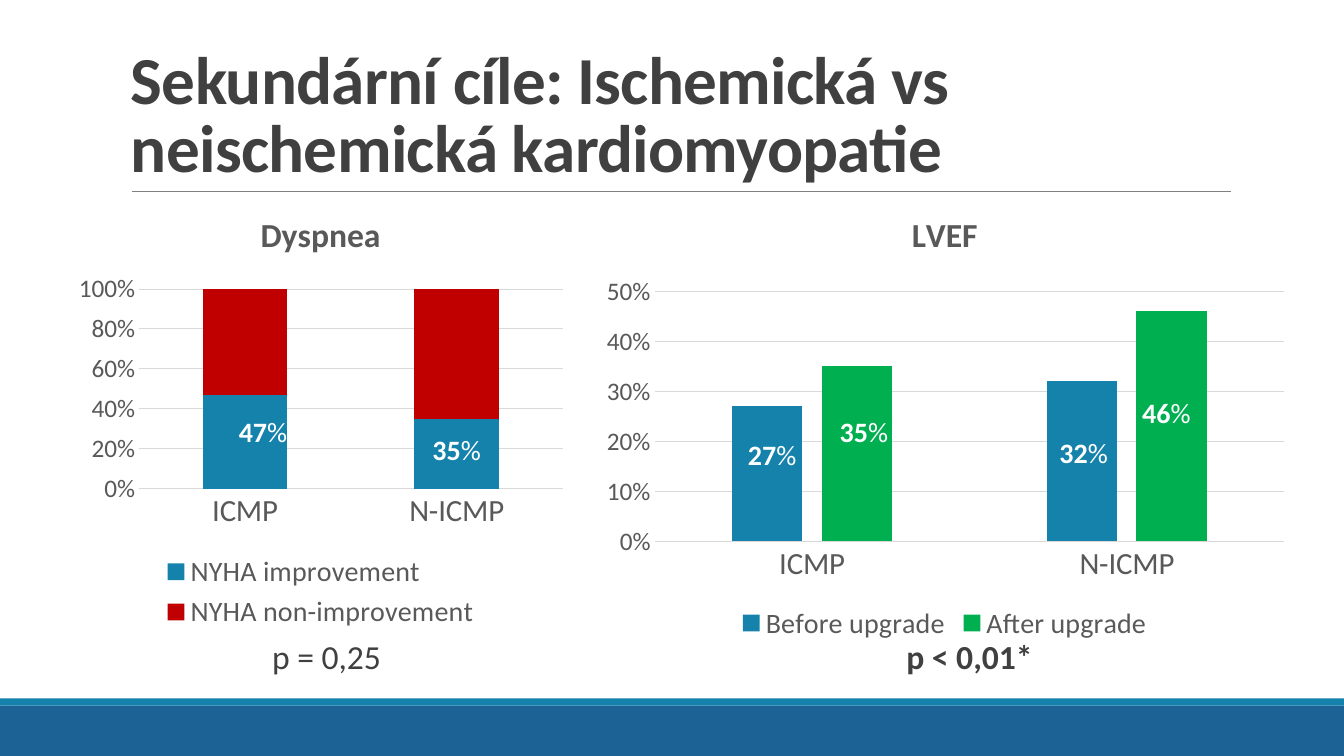
from lxml import etree
from pptx import Presentation
from pptx.chart.data import CategoryChartData
from pptx.dml.color import RGBColor
from pptx.enum.chart import XL_CHART_TYPE, XL_LEGEND_POSITION, XL_TICK_MARK
from pptx.enum.shapes import MSO_CONNECTOR, MSO_SHAPE
from pptx.enum.text import MSO_ANCHOR
from pptx.oxml.ns import qn
from pptx.util import Inches, Pt

STACKED = XL_CHART_TYPE.COLUMN_STACKED_100
CLUSTERED = XL_CHART_TYPE.COLUMN_CLUSTERED
LEGEND_BOTTOM = XL_LEGEND_POSITION.BOTTOM
NO_TICK = XL_TICK_MARK.NONE
STRAIGHT = MSO_CONNECTOR.STRAIGHT
RECTANGLE = MSO_SHAPE.RECTANGLE
TOP, BOTTOM = MSO_ANCHOR.TOP, MSO_ANCHOR.BOTTOM

FONT = "Calibri"
COLORS = {
    "navy": "1C6294", "blue": "1482AB", "red": "C00000", "green": "00B050",
    "dark": "404040", "label": "595959", "rule": "808080", "grid": "D9D9D9",
    "white": "FFFFFF",
}
CATEGORIES = ("ICMP", "N-ICMP")


def color(name):
    return RGBColor.from_string(COLORS[name])


class SlideBuilder:
    """Holds the shared style and the slide being filled."""

    def __init__(self, page):
        self.page = page

    def style_font(self, font, size, color_name, bold=False):
        font.name, font.size, font.bold = FONT, Pt(size), bold
        font.color.rgb = color(color_name)

    def style_line(self, line, color_name, width):
        line.color.rgb = color(color_name)
        line.width = Pt(width)

    def band(self, top, height, color_name):
        shape = self.page.shapes.add_shape(
            RECTANGLE, 0, Inches(top), Inches(13.33), Inches(height))
        shape.shadow.inherit = False
        shape.fill.solid()
        shape.fill.fore_color.rgb = color(color_name)
        shape.line.fill.background()

    def rule(self, left, right, top):
        line = self.page.shapes.add_connector(
            STRAIGHT, Inches(left), Inches(top), Inches(right), Inches(top))
        self.style_line(line.line, "rule", 0.5)
        etree.SubElement(line._element.spPr, qn("a:effectLst"))

    def text(self, bounds, runs, size, color_name, spacing=0.9, anchor=TOP, tracking=0):
        """Add one paragraph; runs are (text, bold) and tracking is in points."""
        box = self.page.shapes.add_textbox(*map(Inches, bounds))
        frame = box.text_frame
        frame.word_wrap = True
        frame.vertical_anchor = anchor
        frame.margin_left, frame.margin_right = Inches(0.1), 0
        para = frame.paragraphs[0]
        para.line_spacing = spacing
        for wording, bold in runs:
            span = para.add_run()
            span.text = wording
            self.style_font(span.font, size, color_name, bold)
            if tracking:
                span.font._element.set("spc", str(round(tracking * 100)))

    def percent_label(self, left, top, value):
        self.text((left, top, 0.66, 0.47), [(value, True), ("%", False)], 20, "white")

    def place_plot(self, chart, fractions):
        """Fix the inner plot area as x, y, w, h fractions of the chart."""
        plot_area = chart._chartSpace.chart.plotArea
        for old in plot_area.findall(qn("c:layout")):
            plot_area.remove(old)
        layout = etree.Element(qn("c:layout"))
        manual = etree.SubElement(layout, qn("c:manualLayout"))
        settings = [("layoutTarget", "inner"), ("xMode", "edge"), ("yMode", "edge")]
        settings += zip("xywh", map(str, fractions))
        for tag, value in settings:
            etree.SubElement(manual, qn("c:" + tag)).set("val", value)
        plot_area.insert(0, layout)

    def column_chart(self, kind, bounds, title, series, gap, overlap, plot_box):
        """Add a chart; series are (name, values, color name)."""
        data = CategoryChartData()
        data.categories = CATEGORIES
        for name, values, _ in series:
            data.add_series(name, values)
        chart = self.page.shapes.add_chart(kind, *map(Inches, bounds), data).chart
        self.style_font(chart.font, 10, "label")

        chart.has_title = True
        span = chart.chart_title.text_frame.paragraphs[0].add_run()
        span.text = title
        self.style_font(span.font, 24, "label", True)
        chart.has_legend = True
        chart.legend.position = LEGEND_BOTTOM
        chart.legend.include_in_layout = False
        self.style_font(chart.legend.font, 20, "label")

        for axis, size in ((chart.category_axis, 22), (chart.value_axis, 18)):
            axis.major_tick_mark = axis.minor_tick_mark = NO_TICK
            self.style_font(axis.tick_labels.font, size, "label")
        self.style_line(chart.category_axis.format.line, "grid", 0.75)
        values_axis = chart.value_axis
        values_axis.format.line.fill.background()
        values_axis.has_major_gridlines = True
        self.style_line(values_axis.major_gridlines.format.line, "grid", 0.75)
        values_axis.tick_labels.number_format = "0%"
        values_axis.tick_labels.number_format_is_linked = False

        plot = chart.plots[0]
        plot.gap_width, plot.overlap = gap, overlap
        plot.vary_by_categories = False
        for bars, (_, _, color_name) in zip(plot.series, series):
            bars.format.fill.solid()
            bars.format.fill.fore_color.rgb = color(color_name)
            bars.invert_if_negative = False
        self.place_plot(chart, plot_box)
        return chart


def main():
    deck = Presentation()
    deck.slide_width, deck.slide_height = Inches(13.33), Inches(7.5)
    slide = SlideBuilder(deck.slides.add_slide(deck.slide_layouts[6]))

    slide.band(7, 0.5, "navy")
    slide.band(6.93, 0.07, "blue")
    slide.rule(1.31, 12.21, 1.9)
    slide.text((1.2, 0.31, 11, 1.59),
               [("Sekundární cíle: Ischemická vs neischemická kardiomyopatie", True)],
               48, "dark", spacing=0.85, anchor=BOTTOM, tracking=-0.5)

    slide.column_chart(
        STACKED, (0.68, 1.9, 5, 4.4), "Dyspnea",
        [("NYHA improvement", (47, 35), "blue"),
         ("NYHA non-improvement", (53, 65), "red")],
        150, 100, (0.14, 0.22, 0.84, 0.45))
    lvef = slide.column_chart(
        CLUSTERED, (5.86, 1.9, 7.02, 4.51), "LVEF",
        [("Before upgrade", (0.27, 0.32), "blue"),
         ("After upgrade", (0.35, 0.46), "green")],
        219, -27, (0.09, 0.22, 0.89, 0.55))
    lvef.value_axis.minimum_scale, lvef.value_axis.maximum_scale = 0, 0.5
    lvef.value_axis.major_unit = 0.1

    for left, top, value in (
            (2.27, 4.1, "47"), (4.19, 4.28, "35"),
            (7.32, 4.33, "27"), (8.23, 4.1, "35"),
            (10.41, 4.31, "32"), (11.23, 3.91, "46")):
        slide.percent_label(left, top, value)
    for left, wording, bold in ((2.6, "p = 0,25", False), (8.89, "p < 0,01*", True)):
        slide.text((left, 6.3, 1.45, 0.47), [(wording, bold)], 24, "dark")

    deck.save("out.pptx")


if __name__ == "__main__":
    main()
